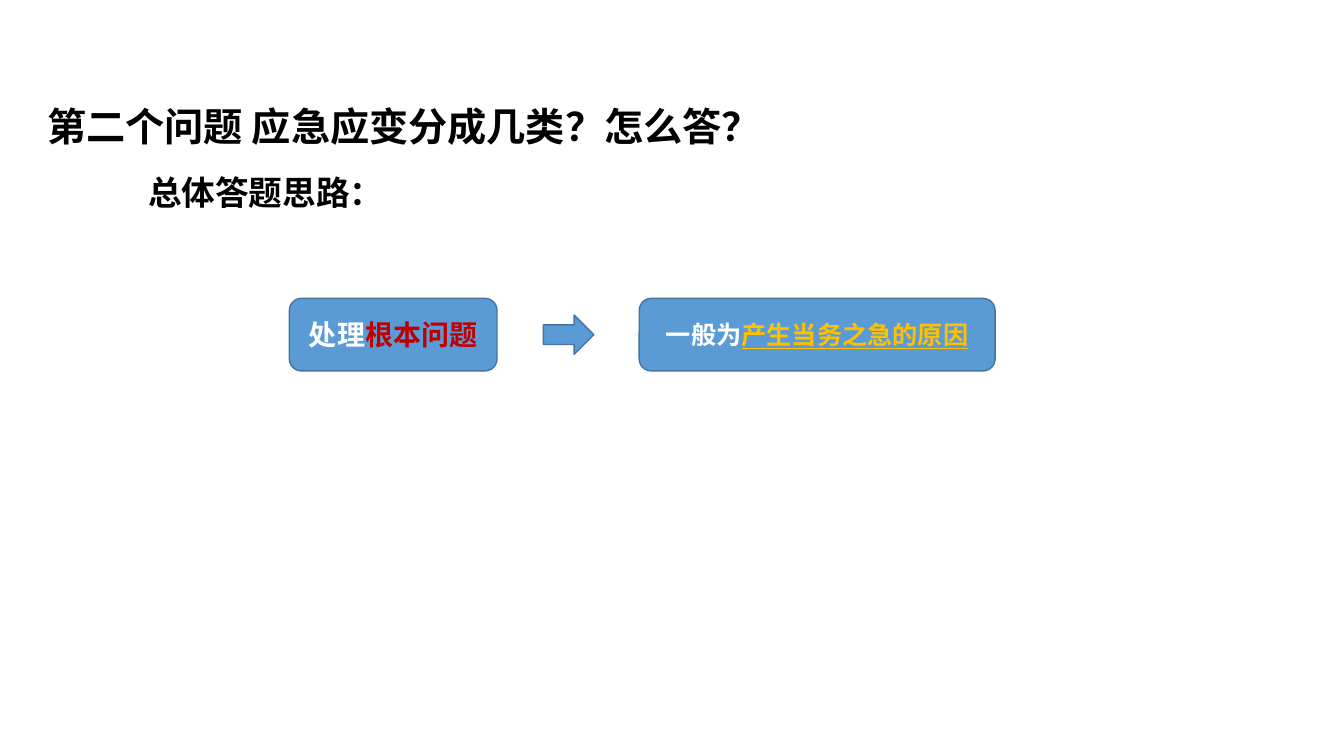
import pptx
import pptx.util
import pptx.dml.color
import pptx.enum.shapes
import pptx.enum.text
import pptx.oxml.ns
import lxml.etree

Inches = pptx.util.Inches
Pt = pptx.util.Pt
SHAPES = pptx.enum.shapes.MSO_SHAPE
ANCHORS = pptx.enum.text.MSO_ANCHOR

COLORS = {
    "black": "000000",
    "white": "FFFFFF",
    "blue": "5B9BD5",
    "outline": "43739E",
    "red": "C00000",
    "gold": "FFC000",
}
HEADING_FONT = "Noto Sans CJK SC"
BOX_FONT = "Calibri"
ROW_TOP, ROW_HEIGHT = 2.96, 0.72


def rgb(name):
    return pptx.dml.color.RGBColor.from_string(COLORS[name])


def style_paragraph(para, size, font_name):
    para.font.size = Pt(size)
    para.font.bold = True
    para.font.name = font_name


def add_heading(page, text, left, top, width, height, size, anchor, indent=0, spacing=1.0):
    box = page.shapes.add_textbox(Inches(left), Inches(top), Inches(width), Inches(height))
    frame = box.text_frame
    frame.word_wrap = True
    frame.vertical_anchor = anchor
    para = frame.paragraphs[0]
    para.line_spacing = spacing
    para._p.get_or_add_pPr().set("indent", str(Inches(indent)))
    span = para.add_run()
    span.text = text
    style_paragraph(para, size, HEADING_FONT)
    para.font.color.rgb = rgb("black")
    # East Asian typeface for the Chinese characters
    east_asian = lxml.etree.SubElement(span._r.get_or_add_rPr(), pptx.oxml.ns.qn("a:ea"))
    east_asian.set("typeface", HEADING_FONT)


def add_blue_shape(page, kind, left, top, width, height):
    shape = page.shapes.add_shape(
        kind, Inches(left), Inches(top), Inches(width), Inches(height))
    shape.shadow.inherit = False
    shape.fill.solid()
    shape.fill.fore_color.rgb = rgb("blue")
    shape.line.color.rgb = rgb("outline")
    shape.line.width = Pt(1)
    return shape


def add_step(page, left, width, size, lead, key, key_color, underline=False):
    box = add_blue_shape(page, SHAPES.ROUNDED_RECTANGLE, left, ROW_TOP, width, ROW_HEIGHT)
    box.text_frame.vertical_anchor = ANCHORS.MIDDLE
    para = box.text_frame.paragraphs[0]
    para.alignment = pptx.enum.text.PP_ALIGN.CENTER
    style_paragraph(para, size, BOX_FONT)
    for text, color in ((lead, "white"), (key, key_color)):
        span = para.add_run()
        span.text = text
        span.font.color.rgb = rgb(color)
    if underline:
        span.font.underline = True


def main():
    deck = pptx.Presentation()
    deck.slide_width, deck.slide_height = Inches(13.33), Inches(7.5)
    page = deck.slides.add_slide(deck.slide_layouts[6])

    # Title and subtitle
    add_heading(page, "第二个问题 应急应变分成几类？怎么答？",
                0.37, 0.96, 8.92, 0.57, 28, ANCHORS.MIDDLE)
    add_heading(page, "总体答题思路：",
                0.37, 1.46, 12.46, 5.3, 24, ANCHORS.TOP, indent=1, spacing=1.5)

    # Problem, arrow, cause
    add_step(page, 2.87, 2.06, 20, "处理", "根本问题", "red")
    add_step(page, 6.34, 3.53, 18, "一般为", "产生当务之急的原因", "gold", underline=True)
    arrow_height = 0.39
    arrow_top = ROW_TOP + (ROW_HEIGHT - arrow_height) / 2
    add_blue_shape(page, SHAPES.RIGHT_ARROW, 5.39, arrow_top, 0.5, arrow_height)

    deck.save("out.pptx")


if __name__ == "__main__":
    main()
